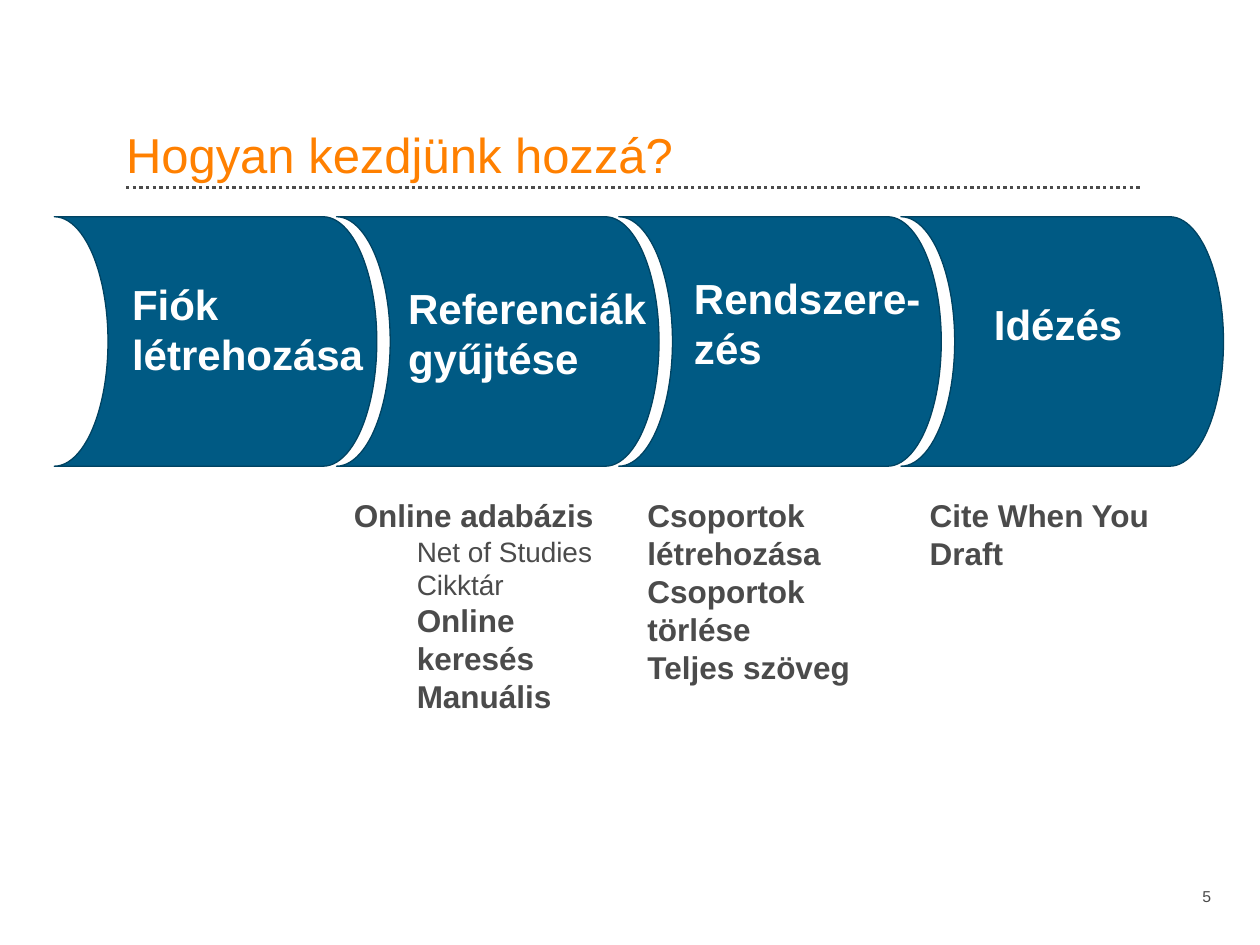
import pptx
import pptx.dml.color
import pptx.enum.dml
import pptx.enum.shapes
import pptx.enum.text
import pptx.oxml.ns
import pptx.util
from lxml import etree

Inches = pptx.util.Inches
Pt = pptx.util.Pt
ALIGN = pptx.enum.text.PP_ALIGN
ORANGE = pptx.dml.color.RGBColor(0xFF, 0x80, 0x00)
BLUE = pptx.dml.color.RGBColor(0x00, 0x5A, 0x84)
DARK_BLUE = pptx.dml.color.RGBColor(0x00, 0x43, 0x62)
GRAY = pptx.dml.color.RGBColor(0x4B, 0x4B, 0x4B)
WHITE = pptx.dml.color.RGBColor(0xFF, 0xFF, 0xFF)


def write_run(para, text, size, color, bold=False):
    span = para.add_run()
    span.text = text
    span.font.name = "Arial"
    span.font.size = Pt(size)
    span.font.bold = bold
    span.font.color.rgb = color


def add_text(page, place, lines, color, align=ALIGN.LEFT):
    box = page.shapes.add_textbox(*[Inches(length) for length in place])
    frame = box.text_frame
    frame.word_wrap = True
    for index, (text, size, bold, indent) in enumerate(lines):
        para = frame.paragraphs[0] if index == 0 else frame.add_paragraph()
        para.alignment = align
        if indent:
            para.level = 1
            properties = para._p.get_or_add_pPr()
            properties.set("marL", str(Inches(indent)))
            properties.set("indent", "0")
        write_run(para, text, size, color, bold)


deck = pptx.Presentation()
deck.slide_width = Inches(10)
deck.slide_height = Inches(7.5)
page = deck.slides.add_slide(deck.slide_layouts[5])

title = page.shapes.title
title.left, title.top = Inches(1), Inches(0.55)
title.width, title.height = Inches(8.06), Inches(0.91)
frame = title.text_frame
frame.word_wrap = True
frame.auto_size = pptx.enum.text.MSO_AUTO_SIZE.NONE
frame.vertical_anchor = pptx.enum.text.MSO_ANCHOR.BOTTOM
frame.margin_left = frame.margin_top = frame.margin_right = frame.margin_bottom = 0
para = frame.paragraphs[0]
para.alignment = ALIGN.LEFT
para.line_spacing = 0.9
write_run(para, "Hogyan kezdjünk hozzá?", 28, ORANGE)

rule = page.shapes.add_connector(
    pptx.enum.shapes.MSO_CONNECTOR.STRAIGHT,
    Inches(1), Inches(1.49), Inches(9.06), Inches(1.49))
rule.line.color.rgb = GRAY
rule.line.width = Pt(1.9)
rule.line.dash_style = pptx.enum.dml.MSO_LINE.ROUND_DOT
etree.SubElement(rule._element.spPr, pptx.oxml.ns.qn("a:effectLst"))

steps = [
    ("Fiók létrehozása", (0.95, 2.16, 2.09, 0.91)),
    ("Referenciák gyűjtése", (3.14, 2.19, 2.12, 0.91)),
    ("Rendszere-zés", (5.41, 2.11, 2.1, 0.91)),
    ("Idézés", (7.79, 2.32, 1.72, 0.5)),
]
for index in range(len(steps)):
    arrow = page.shapes.add_shape(
        pptx.enum.shapes.MSO_SHAPE.FLOWCHART_STORED_DATA,
        Inches(0.43 + 2.24 * index), Inches(1.72), Inches(2.56), Inches(1.98))
    arrow.rotation = 180
    arrow.shadow.inherit = False
    arrow.fill.solid()
    arrow.fill.fore_color.rgb = BLUE
    arrow.line.color.rgb = DARK_BLUE
    arrow.line.width = Pt(0.75)

for label, place in steps:
    add_text(page, place, [(label, 24, True, 0)], WHITE)

details = [
    ((2.71, 3.89, 2.27, 1.55), [
        ("Online adabázis", 18, True, 0),
        ("Net of Studies", 16, False, 0.5),
        ("Cikktár", 16, False, 0.5),
        ("Online keresés", 18, True, 0.5),
        ("Manuális", 18, True, 0.5),
    ]),
    ((5.04, 3.89, 2.27, 1.62), [
        ("Csoportok létrehozása", 18, True, 0),
        ("Csoportok törlése", 18, True, 0),
        ("Teljes szöveg", 18, True, 0),
    ]),
    ((7.28, 3.89, 2.27, 0.71), [("Cite When You Draft", 18, True, 0)]),
]
for place, lines in details:
    add_text(page, place, lines, GRAY)

add_text(page, (9.21, 6.99, 0.5, 0.25), [("5", 9, False, 0)], GRAY, ALIGN.RIGHT)

deck.save("out.pptx")
